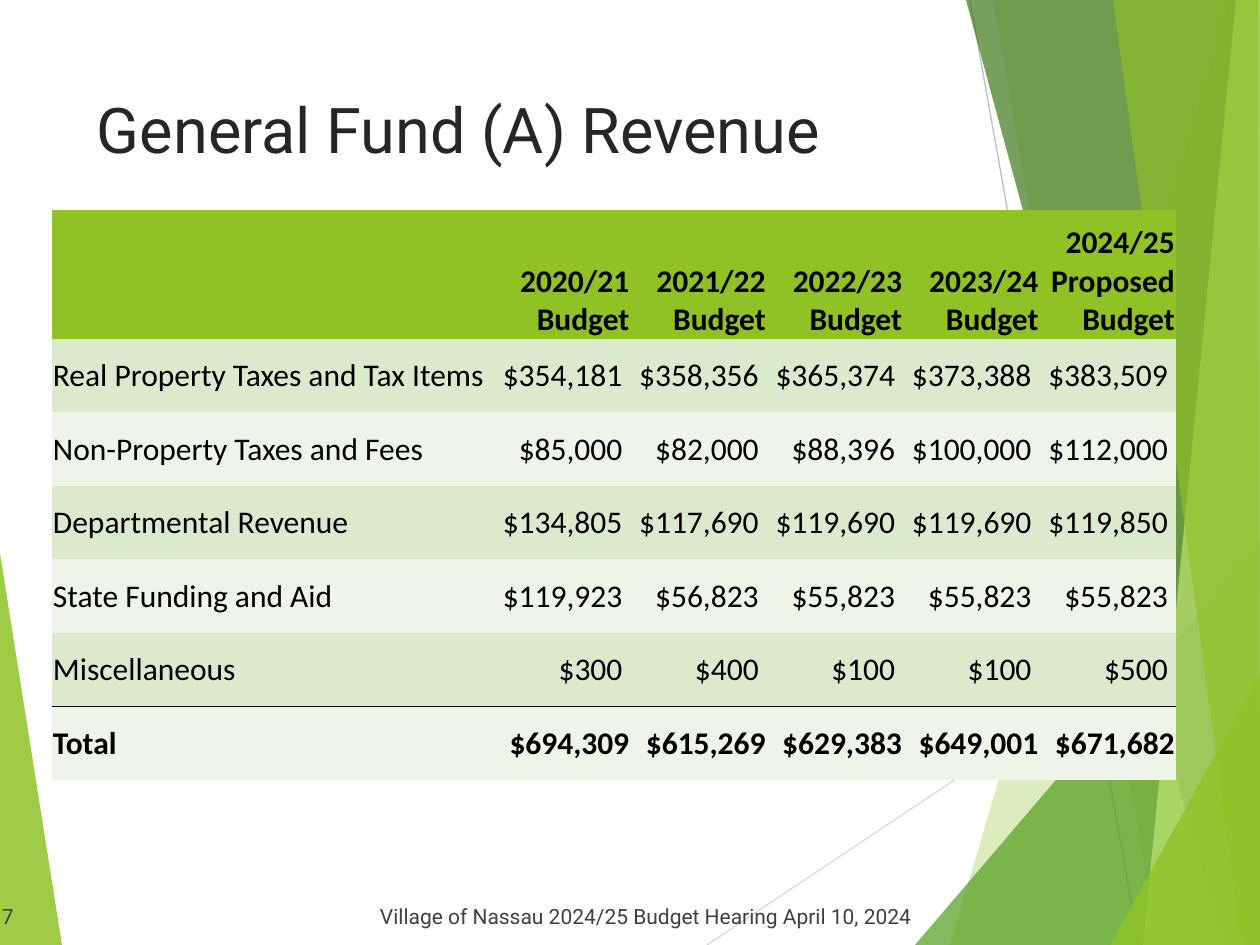
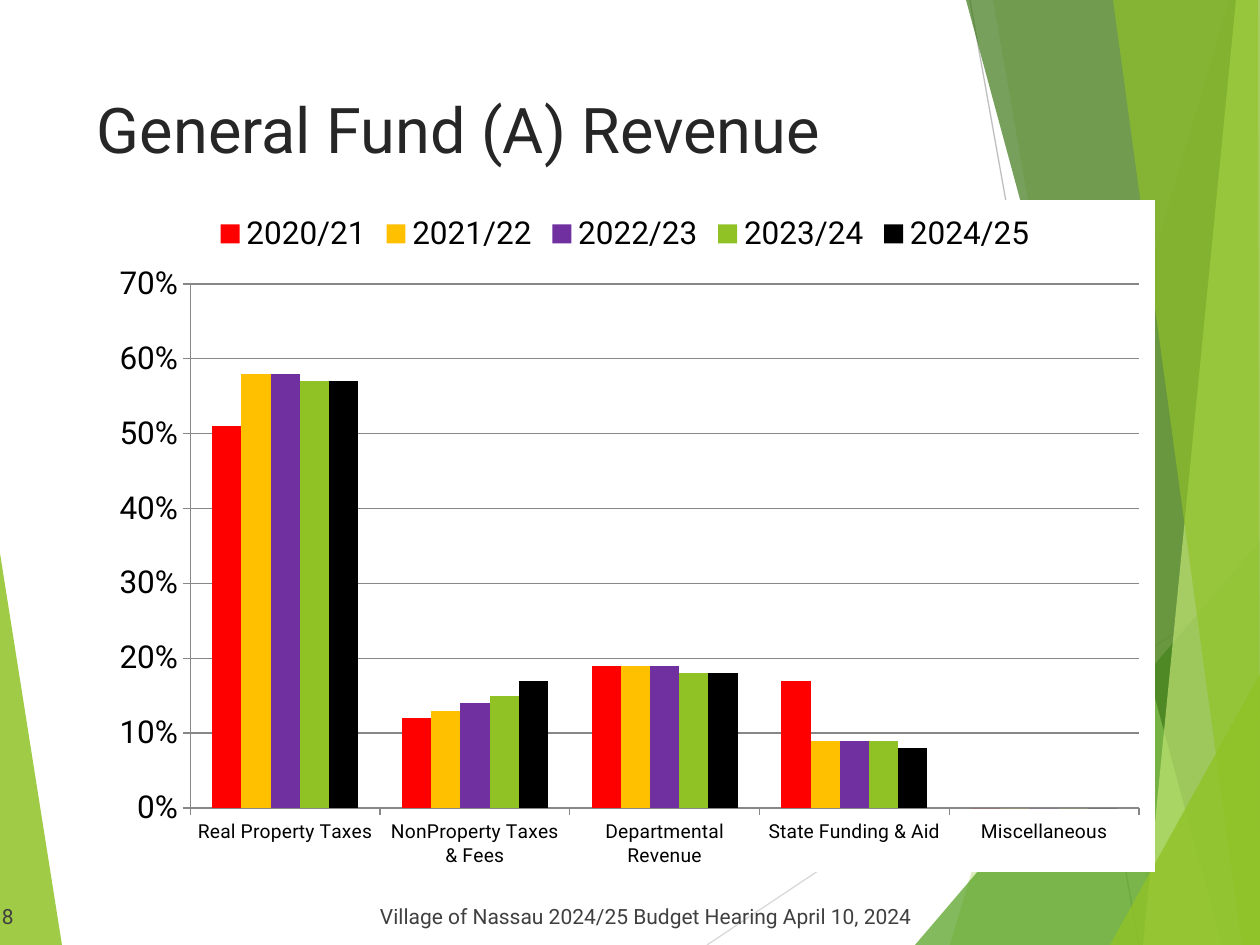
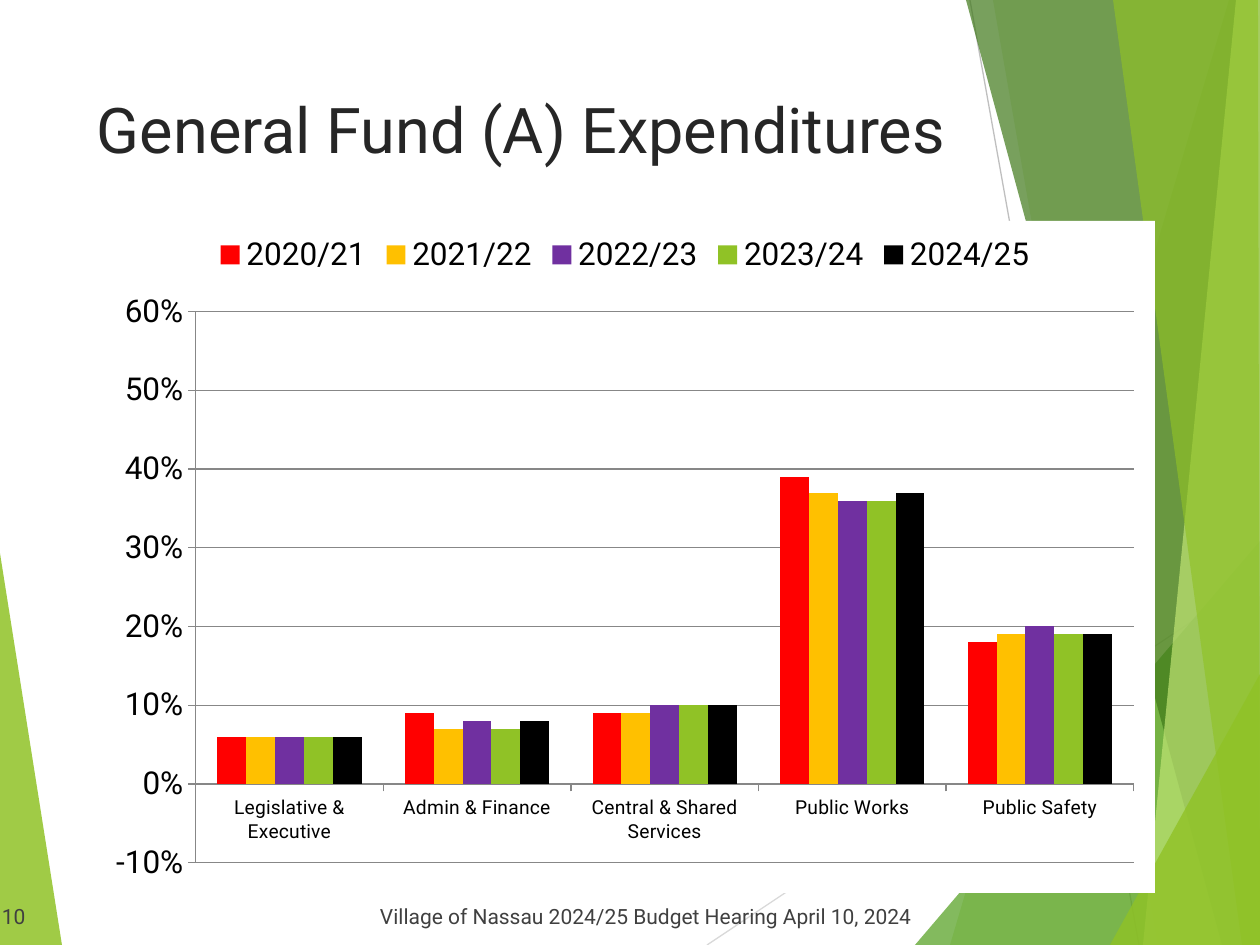
"""Build three budget hearing slides: a revenue table and two column charts."""
from lxml import etree
from pptx import Presentation
from pptx.chart.data import CategoryChartData
from pptx.dml.color import RGBColor
from pptx.enum.chart import XL_CHART_TYPE, XL_LEGEND_POSITION, XL_TICK_MARK
from pptx.enum.shapes import MSO_CONNECTOR
from pptx.enum.text import MSO_ANCHOR, PP_ALIGN
from pptx.oxml import parse_xml
from pptx.oxml.ns import nsdecls, qn
from pptx.util import Pt

COLUMN = XL_CHART_TYPE.COLUMN_CLUSTERED
TOP_LEGEND = XL_LEGEND_POSITION.TOP
TICK_OUT = XL_TICK_MARK.OUTSIDE
STRAIGHT = MSO_CONNECTOR.STRAIGHT
TOP, MIDDLE, BOTTOM = MSO_ANCHOR.TOP, MSO_ANCHOR.MIDDLE, MSO_ANCHOR.BOTTOM
LEFT, RIGHT = PP_ALIGN.LEFT, PP_ALIGN.RIGHT

EMU_PER_PX = 914400 / 126
W, H = 1260, 945
FONT, TABLE_FONT = "Roboto", "Calibri"
NO_GRID_STYLE = "{2D5ABB26-0587-4C30-8999-92F81FD0307C}"
BLACK, WHITE, GRID = "000000", "FFFFFF", "878787"
TITLE, FOOTER, GREEN = "262626", "404040", "90C226"
BANDS = ("DBE9CD", "EEF4E8")

FOOTER_TEXT = "Village of Nassau 2024/25 Budget Hearing April 10, 2024"

LEFT_WEDGE = (GREEN, 85, [(0, 553), (62, H), (0, H)])
RAYS = [("D9D9D9", (707, H), (W, 576)), ("BFBFBF", (970, 0), (1139, H))]
FACETS = [
    (GREEN, 30, [(1229, 0), (950, H), (W, H), (W, 0)]),
    (GREEN, 20, [(993, 0), (1158, H), (W, H), (W, 0)]),
    ("54A021", 72, [(915, H), (W, 541), (W, H)]),
    ("3F7819", 70, [(966, 0), (1222, H), (W, H), (W, 0)]),
    ("C0E474", 70, [(1236, 0), (1143, H), (W, H), (W, 0)]),
    (GREEN, 65, [(1113, 0), (1242, H), (W, H), (1258, 0)]),
    (GREEN, 80, [(1110, H), (W, 674), (W, H)]),
]

REVENUE_TABLE = [
    ["", "2020/21\nBudget", "2021/22\nBudget", "2022/23\nBudget",
     "2023/24\nBudget", "2024/25 Proposed\nBudget"],
    ["Real Property Taxes and Tax Items",
     "$354,181", "$358,356", "$365,374", "$373,388", "$383,509"],
    ["Non-Property Taxes and Fees",
     "$85,000", "$82,000", "$88,396", "$100,000", "$112,000"],
    ["Departmental Revenue",
     "$134,805", "$117,690", "$119,690", "$119,690", "$119,850"],
    ["State Funding and Aid",
     "$119,923", "$56,823", "$55,823", "$55,823", "$55,823"],
    ["Miscellaneous", "$300", "$400", "$100", "$100", "$500"],
    ["Total", "$694,309", "$615,269", "$629,383", "$649,001", "$671,682"],
]
TABLE_BOX = (52, 210, 1124, 570)
LABEL_W, HEADER_H = 442, 129

YEARS = [("2020/21", "FF0000"), ("2021/22", "FFC000"), ("2022/23", "7030A0"),
         ("2023/24", GREEN), ("2024/25", BLACK)]
REVENUE_CHART = {
    "box": (95, 200, 1060, 672),
    "plot": (0.09, 0.125, 0.895, 0.78),
    "range": (0, 0.7),
    "shares": {
        "Real Property Taxes": (0.51, 0.58, 0.58, 0.57, 0.57),
        "NonProperty Taxes & Fees": (0.12, 0.13, 0.14, 0.15, 0.17),
        "Departmental Revenue": (0.19, 0.19, 0.19, 0.18, 0.18),
        "State Funding & Aid": (0.17, 0.09, 0.09, 0.09, 0.08),
        "Miscellaneous": (0, 0, 0, 0, 0),
    },
}
EXPENDITURE_CHART = {
    "box": (95, 221, 1060, 672),
    "plot": (0.095, 0.135, 0.885, 0.82),
    "range": (-0.1, 0.6),
    "shares": {
        "Legislative & Executive": (0.06, 0.06, 0.06, 0.06, 0.06),
        "Admin & Finance": (0.09, 0.07, 0.08, 0.07, 0.08),
        "Central & Shared Services": (0.09, 0.09, 0.1, 0.1, 0.1),
        "Public Works": (0.39, 0.37, 0.36, 0.36, 0.37),
        "Public Safety": (0.18, 0.19, 0.2, 0.19, 0.19),
    },
}


def px(n):
    return round(n * EMU_PER_PX)


def rgb(color):
    return RGBColor.from_string(color)


def style(font, size, color, name=FONT, bold=False):
    font.size, font.name, font.bold = Pt(size), name, bold
    font.color.rgb = rgb(color)


def paint(fill, color):
    fill.solid()
    fill.fore_color.rgb = rgb(color)


def add_facet(slide, color, alpha, points):
    builder = slide.shapes.build_freeform(*points[0], scale=EMU_PER_PX)
    builder.add_line_segments(points[1:])
    sp = builder.convert_to_shape()
    sp.shadow.inherit = False
    sp.line.fill.background()
    paint(sp.fill, color)
    clr = sp.fill._xPr.find(".//" + qn("a:srgbClr"))
    etree.SubElement(clr, qn("a:alpha")).set("val", str(alpha * 1000))


def add_ray(slide, color, start, end):
    line = slide.shapes.add_connector(STRAIGHT, *map(px, start + end))
    line.line.color.rgb = rgb(color)
    line.line.width = Pt(0.75)
    etree.SubElement(line._element.spPr, qn("a:effectLst"))


def add_text(slide, box, text, size, color, anchor, inset=13):
    tf = slide.shapes.add_textbox(*map(px, box)).text_frame
    tf.word_wrap, tf.vertical_anchor = True, anchor
    tf.margin_left = px(inset)
    p = tf.paragraphs[0]
    p.text = text
    style(p.runs[0].font, size, color)
    return p


def add_base(prs, title, number):
    slide = prs.slides.add_slide(prs.slide_layouts[6])
    add_facet(slide, *LEFT_WEDGE)
    for ray in RAYS:
        add_ray(slide, *ray)
    for facet in FACETS:
        add_facet(slide, *facet)
    p = add_text(slide, (0, 885, 967, 50), f"{number}\t{FOOTER_TEXT}",
                 12, FOOTER, BOTTOM, inset=2)
    tabs = etree.SubElement(p._p.get_or_add_pPr(), qn("a:tabLst"))
    etree.SubElement(tabs, qn("a:tab"), pos=str(px(378)), algn="l")
    add_text(slide, (84, 84, 904, 181), title, 36, TITLE, TOP)
    return slide


def add_bottom_border(cell):
    cell._tc.get_or_add_tcPr().insert(0, parse_xml(
        f'<a:lnB {nsdecls("a")} w="12700"><a:solidFill>'
        f'<a:srgbClr val="{BLACK}"/></a:solidFill></a:lnB>'))


def add_budget_table(slide, rows):
    last, n_cols = len(rows) - 1, len(rows[0])
    frame = slide.shapes.add_table(len(rows), n_cols, *map(px, TABLE_BOX))
    table = frame.table
    table.first_row = table.horz_banding = False
    table._tbl.tblPr.find(qn("a:tableStyleId")).text = NO_GRID_STYLE
    _, _, width, height = TABLE_BOX
    for i, col in enumerate(table.columns):
        col.width = px((width - LABEL_W) / (n_cols - 1) if i else LABEL_W)
    for r, values in enumerate(rows):
        table.rows[r].height = px((height - HEADER_H) / last if r else HEADER_H)
        strong = r in (0, last)
        for c, text in enumerate(values):
            cell = table.cell(r, c)
            paint(cell.fill, BANDS[(r - 1) % 2] if r else GREEN)
            cell.vertical_anchor = MIDDLE if r else BOTTOM
            cell.margin_left = cell.margin_top = px(1)
            cell.margin_right = px(1 if strong or c == 0 else 8)
            cell.margin_bottom = 0
            cell.text_frame.text = text
            for p in cell.text_frame.paragraphs:
                p.alignment = RIGHT if c else LEFT
                style(p.font, 18, BLACK, TABLE_FONT, strong)
                for run in p.runs:
                    style(run.font, 18, BLACK, TABLE_FONT, strong)
            if r == last - 1:
                add_bottom_border(cell)


def set_plot_layout(chart, plot):
    area = chart.element.find(".//" + qn("c:plotArea"))
    for old in area.findall(qn("c:layout")):
        area.remove(old)
    sizes = "".join(f'<c:{k} val="{v}"/>' for k, v in zip("xywh", plot))
    area.insert(0, parse_xml(
        f'<c:layout {nsdecls("c")}><c:manualLayout>'
        '<c:layoutTarget val="inner"/><c:xMode val="edge"/>'
        f'<c:yMode val="edge"/>{sizes}</c:manualLayout></c:layout>'))


def add_share_chart(slide, content):
    shares = content["shares"]
    data = CategoryChartData(number_format="0%")
    data.categories = list(shares)
    for (year, _), values in zip(YEARS, zip(*shares.values())):
        data.add_series(year, values)
    box = map(px, content["box"])
    chart = slide.shapes.add_chart(COLUMN, *box, data).chart
    style(chart.font, 18, BLACK)
    chart.has_title = False
    chart.has_legend = True
    chart.legend.position = TOP_LEGEND
    chart.legend.include_in_layout = False
    plot = chart.plots[0]
    plot.gap_width, plot.vary_by_categories = 150, False
    for series, (_, color) in zip(plot.series, YEARS):
        paint(series.format.fill, color)
    cat, val = chart.category_axis, chart.value_axis
    style(cat.tick_labels.font, 11, BLACK)
    val.minimum_scale, val.maximum_scale = content["range"]
    val.major_unit = 0.1
    val.has_major_gridlines = True
    val.tick_labels.number_format = "0%"
    val.tick_labels.number_format_is_linked = False
    for axis in (cat, val):
        axis.major_tick_mark = TICK_OUT
    for part in (cat, val, val.major_gridlines):
        part.format.line.color.rgb = rgb(GRID)
        part.format.line.width = Pt(0.75)
    set_plot_layout(chart, content["plot"])
    chart.element.find(qn("c:chart")).addnext(parse_xml(
        f'<c:spPr {nsdecls("c", "a")}><a:solidFill><a:srgbClr val="{WHITE}"/>'
        '</a:solidFill><a:ln><a:noFill/></a:ln></c:spPr>'))


SLIDES = [
    ("General Fund (A) Revenue", 7, add_budget_table, REVENUE_TABLE),
    ("General Fund (A) Revenue", 8, add_share_chart, REVENUE_CHART),
    ("General Fund (A) Expenditures", 10, add_share_chart, EXPENDITURE_CHART),
]


def main():
    prs = Presentation()
    prs.slide_width, prs.slide_height = px(W), px(H)
    for title, number, add_content, content in SLIDES:
        add_content(add_base(prs, title, number), content)
    prs.save("out.pptx")


if __name__ == "__main__":
    main()
